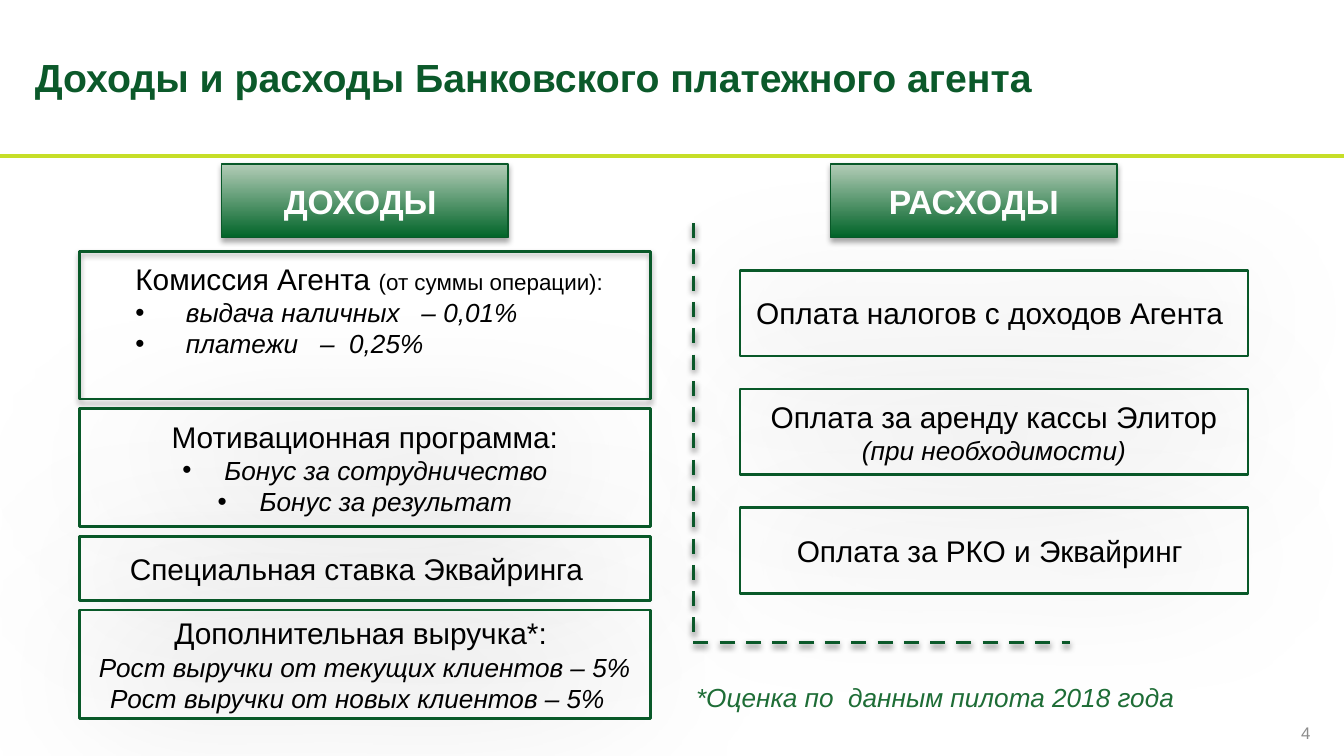
from dataclasses import dataclass

from lxml import etree
from pptx import Presentation
from pptx.dml.color import RGBColor
from pptx.enum.dml import MSO_LINE
from pptx.enum.shapes import MSO_CONNECTOR, MSO_SHAPE
from pptx.enum.text import MSO_ANCHOR, PP_ALIGN
from pptx.oxml.ns import qn
from pptx.util import Pt

RECT, STRAIGHT, DASH = MSO_SHAPE.RECTANGLE, MSO_CONNECTOR.STRAIGHT, MSO_LINE.DASH
LEFT, CENTER = PP_ALIGN.LEFT, PP_ALIGN.CENTER
TOP, MIDDLE = MSO_ANCHOR.TOP, MSO_ANCHOR.MIDDLE


@dataclass(frozen=True)
class Theme:
    """Colours, font and type sizes of the slide."""
    font: str = "Arial"
    green: str = "0B592A"
    border: str = "095929"
    dark: str = "006428"
    pale: str = "B4CDB8"
    lime: str = "C6DE27"
    note: str = "1E6D36"
    grey: str = "8C8C8C"
    black: str = "000000"
    white: str = "FFFFFF"
    title: float = 21
    header: float = 18
    body: float = 16
    detail: float = 14
    small: float = 12
    number: float = 9


T = Theme()
BODY = {"size": T.body}
DETAIL = {"size": T.detail, "italic": True}
SMALL = {"size": T.small}
INSETS = (7.2, 3.6, 7.2, 3.6)


def rgb(value):
    """Return a colour object for a hex value."""
    return RGBColor.from_string(value)


def add_shadow(shape, blur=3.1, dist=1.8, alpha=35):
    """Give a shape a downward outer shadow."""
    effects = etree.SubElement(shape._element.spPr, qn("a:effectLst"))
    if not blur:
        return
    outer = etree.SubElement(effects, qn("a:outerShdw"), blurRad=str(Pt(blur)),
                             dist=str(Pt(dist)), dir="5400000", rotWithShape="0")
    color = etree.SubElement(outer, qn("a:srgbClr"), val=T.black)
    etree.SubElement(color, qn("a:alpha"), val=str(alpha * 1000))


def add_bullet(p, indent):
    """Put a hanging round bullet on a paragraph."""
    pPr = p._p.get_or_add_pPr()
    pPr.set("marL", str(Pt(indent)))
    pPr.set("indent", str(-Pt(indent)))
    etree.SubElement(pPr, qn("a:buFont"), typeface=T.font)
    etree.SubElement(pPr, qn("a:buChar"), char="•")


def write(shape, paragraphs, color=T.black, align=LEFT, anchor=TOP, insets=INSETS):
    """Fill a shape with paragraphs of (bullet indent, runs)."""
    tf = shape.text_frame
    sides = ("margin_left", "margin_top", "margin_right", "margin_bottom")
    frame = {"word_wrap": True, "vertical_anchor": anchor}
    frame.update(zip(sides, map(Pt, insets)))
    for name, value in frame.items():
        setattr(tf, name, value)
    for i, (indent, runs) in enumerate(paragraphs):
        p = tf.add_paragraph() if i else tf.paragraphs[0]
        p.alignment = align
        if indent:
            add_bullet(p, indent)
        for text, style in runs:
            r = p.add_run()
            r.text = text
            for name, value in {"name": T.font, **style, "size": Pt(style["size"])}.items():
                setattr(r.font, name, value)
            r.font.color.rgb = rgb(color)


def add_text(s, box, paragraphs, **layout):
    """Place a text box."""
    write(s.shapes.add_textbox(*map(Pt, box)), paragraphs, **layout)


def add_line(s, x1, y1, x2, y2, color, dash=None, blur=0):
    """Draw a straight line."""
    line = s.shapes.add_connector(STRAIGHT, *map(Pt, (x1, y1, x2, y2)))
    line.line.color.rgb = rgb(color)
    line.line.width = Pt(2)
    if dash:
        line.line.dash_style = dash
    add_shadow(line, blur, 1.6, 38)


def add_rect(s, box, width, blur):
    """Draw an unfilled bordered rectangle with a shadow."""
    sp = s.shapes.add_shape(RECT, *map(Pt, box))
    sp.fill.background()
    sp.line.color.rgb = rgb(T.border)
    sp.line.width = Pt(width)
    add_shadow(sp, blur)
    return sp


def add_header(s, box, text):
    """Draw a column header with a green gradient."""
    sp = add_rect(s, box, 0.75, 3.1)
    sp.fill.gradient()
    sp.fill.gradient_angle = 90
    for stop, color in zip(sp.fill.gradient_stops, (T.dark, T.pale)):
        stop.color.rgb = rgb(color)
    write(sp, [(0, [(text, {"size": T.header, "bold": True})])], T.white, CENTER, MIDDLE)


def add_column(s, box, gap, cards):
    """Stack cards of (height, paragraphs) down a column."""
    x, y, w = box
    for height, paragraphs in cards:
        sp = add_rect(s, (x, y, w, height), 1.5, 68 if paragraphs else 3.1)
        write(sp, paragraphs, align=CENTER, anchor=MIDDLE)
        y += height + gap


def add_title(s, box, text):
    """Place the slide title and the rule below it."""
    add_line(s, 0, 83.5, 720, 83.5, T.lime)
    add_text(s, box, [(0, [(text, {"size": T.title, "bold": True})])],
             color=T.green, anchor=MIDDLE, insets=(0, 3.6, 7.2, 3.6))


def add_income(s, box):
    """Build the income column."""
    x, y, w = box
    add_text(s, (x + 23, y + 1.5, 293, 60.5), [
        (0, [("Комиссия Агента ", BODY), ("(от суммы операции):", SMALL)]),
        (27, [("выдача наличных   – 0,01%", DETAIL)]),
        (27, [("платежи   –  0,25%", DETAIL)])])
    add_header(s, (x + 76.3, 87.8, 153.4, 39.6), "ДОХОДЫ ")
    add_column(s, box, 5, [
        (79.2, []),
        (63.4, [(0, [("Мотивационная программа:", BODY)]),
                (22.5, [("Бонус за сотрудничество", DETAIL)]),
                (22.5, [("Бонус за результат", DETAIL)])]),
        (34.6, [(0, [("Специальная ставка Эквайринга  ", BODY)])]),
        (58.3, [(0, [("Дополнительная выручка*: ", BODY)]),
                (0, [("Рост выручки от текущих клиентов – 5%", DETAIL)]),
                (0, [("Рост выручки от новых клиентов – 5%  ", DETAIL)])])])


def add_expenses(s, box):
    """Build the expenses column."""
    add_header(s, (box[0] + 48.6, 87.8, 153.4, 39.6), "РАСХОДЫ")
    add_column(s, box, 17.7, [
        (46, [(0, [("Оплата налогов с доходов Агента ", BODY)])]),
        (46, [(0, [("Оплата за аренду кассы Элитор ", BODY),
                   ("(при необходимости)", DETAIL)])]),
        (46, [(0, [("Оплата за РКО и Эквайринг ", BODY)])])])


def add_divider(s, x, top, right, bottom):
    """Draw the dashed corner between the columns."""
    add_line(s, x, top, x, bottom, T.green, DASH, 3.1)
    add_line(s, x, bottom, right, bottom, T.green, DASH, 3.1)


def add_footer(s, note_box, number_box):
    """Place the footnote and the page number."""
    add_text(s, note_box, [(0, [("*Оценка по  данным пилота 2018 года", DETAIL)])],
             color=T.note)
    add_text(s, number_box, [(0, [("4", {"size": T.number})])],
             color=T.grey, anchor=MIDDLE, insets=(0, 3.6, 0, 3.6))


def main():
    """Build the slide and save it."""
    prs = Presentation()
    prs.slide_width, prs.slide_height = Pt(720), Pt(405)
    s = prs.slides.add_slide(prs.slide_layouts[6])
    add_title(s, (18.7, 0.7, 554.4, 80.6), "Доходы и расходы Банковского платежного агента")
    add_income(s, (42.5, 134.6, 306))
    add_expenses(s, (396.4, 144.7, 272.2))
    add_divider(s, 371.5, 119.5, 573.1, 344.2)
    add_footer(s, (365.8, 361.4, 289.4, 24.5), (697, 381.6, 18.7, 21.6))
    prs.save("out.pptx")


if __name__ == "__main__":
    main()
